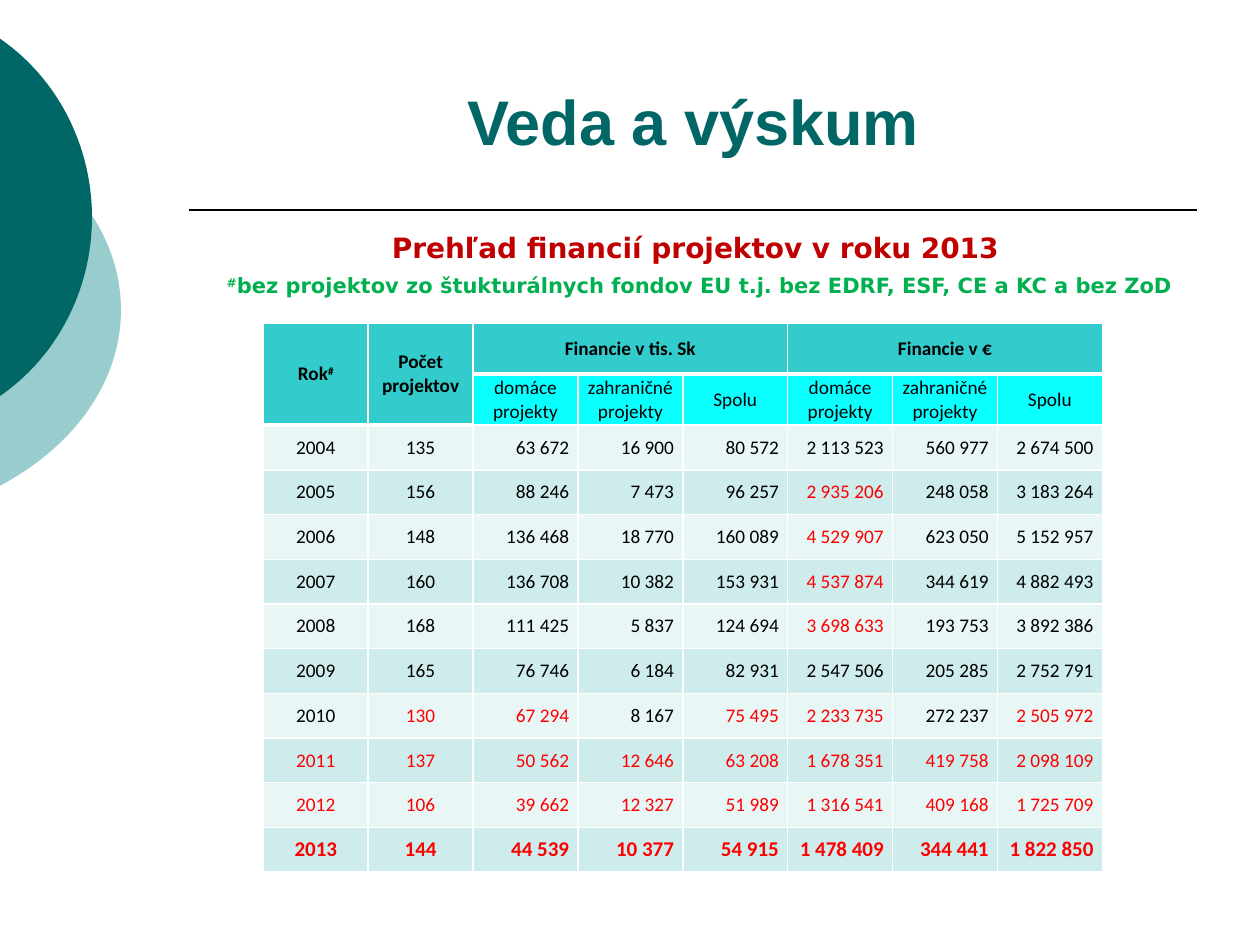
from lxml import etree
from pptx import Presentation
from pptx.dml.color import RGBColor
from pptx.enum.shapes import MSO_CONNECTOR as Connector
from pptx.enum.text import MSO_ANCHOR as Anchor, PP_ALIGN as Align
from pptx.oxml import parse_xml
from pptx.oxml.ns import nsdecls, qn
from pptx.util import Inches, Pt

BLACK = RGBColor(0x00, 0x00, 0x00)
WHITE = RGBColor(0xFF, 0xFF, 0xFF)
RED = RGBColor(0xFF, 0x00, 0x00)
DARK_RED = RGBColor(0xC0, 0x00, 0x00)
GREEN = RGBColor(0x00, 0xB0, 0x50)
TEAL = RGBColor(0x00, 0x66, 0x66)
PALE_TEAL = RGBColor(0x99, 0xCC, 0xCC)
HEADER = RGBColor(0x33, 0xCC, 0xCC)
SUBHEADER = RGBColor(0x0A, 0xFF, 0xFF)
BANDS = (RGBColor(0xE8, 0xF6, 0xF6), RGBColor(0xCE, 0xEC, 0xEC))

# Header cells: (column, text, superscript, rows spanned, columns spanned)
GROUPS = [
    (0, "Rok", "#", 2, 1),
    (1, "Počet projektov", "", 2, 1),
    (2, "Financie v tis. Sk", "", 1, 3),
    (5, "Financie v €", "", 1, 3),
]
SUBHEADINGS = ["domáce projekty", "zahraničné projekty", "Spolu"] * 2

YEARS = [
    ("2004", "135", "63 672", "16 900", "80 572", "2 113 523", "560 977", "2 674 500"),
    ("2005", "156", "88 246", "7 473", "96 257", "2 935 206", "248 058", "3 183 264"),
    ("2006", "148", "136 468", "18 770", "160 089", "4 529 907", "623 050", "5 152 957"),
    ("2007", "160", "136 708", "10 382", "153 931", "4 537 874", "344 619", "4 882 493"),
    ("2008", "168", "111 425", "5 837", "124 694", "3 698 633", "193 753", "3 892 386"),
    ("2009", "165", "76 746", "6 184", "82 931", "2 547 506", "205 285", "2 752 791"),
    ("2010", "130", "67 294", "8 167", "75 495", "2 233 735", "272 237", "2 505 972"),
    ("2011", "137", "50 562", "12 646", "63 208", "1 678 351", "419 758", "2 098 109"),
    ("2012", "106", "39 662", "12 327", "51 989", "1 316 541", "409 168", "1 725 709"),
    ("2013", "144", "44 539", "10 377", "54 915", "1 478 409", "344 441", "1 822 850"),
]
# Columns printed in red, by year
RED_COLUMNS = {year: {5} for year in ("2005", "2006", "2007", "2008")}
RED_COLUMNS["2010"] = {1, 2, 4, 5, 7}
RED_COLUMNS.update({year: set(range(8)) for year in ("2011", "2012", "2013")})


def add_text(paragraph, text, font="Calibri", size=11, color=BLACK, bold=False,
             align=Align.CENTER, raised=False):
    paragraph.alignment = align
    run = paragraph.add_run()
    run.text = text
    run.font.name, run.font.size, run.font.bold = font, Pt(size), bold
    run.font.color.rgb = color
    if raised:
        run._r.get_or_add_rPr().set("baseline", "30000")


class SlideBuilder:
    """Places elements on a grid of 100 columns by 75 rows."""

    def __init__(self, deck):
        self.col = deck.slide_width / 100
        self.row = deck.slide_height / 75
        self.slide = deck.slides.add_slide(deck.slide_layouts[5])
        self.shapes = self.slide.shapes

    def box(self, left, top, width, height):
        return (round(left * self.col), round(top * self.row),
                round(width * self.col), round(height * self.row))

    def title(self, text, *place):
        title = self.shapes.title
        title.left, title.top, title.width, title.height = self.box(*place)
        title.text_frame.vertical_anchor = Anchor.MIDDLE
        add_text(title.text_frame.paragraphs[0], text, font="Arial", size=36,
                 color=TEAL, bold=True)

    def disc(self, color, place, start, pull_a, pull_b, side):
        """Disc cut by the left edge; its lower half mirrors the upper."""
        left, top, width, height = self.box(*place)
        mirror = [(x, 2 * side[1] - y) for x, y in (pull_b, pull_a, start)]
        outline = self.shapes.build_freeform(*self.box(*start, 0, 0)[:2])
        outline.add_line_segments([self.box(*point, 0, 0)[:2]
                                   for point in (side, mirror[-1])], close=True)
        disc = outline.convert_to_shape()
        disc.left, disc.top, disc.width, disc.height = left, top, width, height
        disc.shadow.inherit = False
        disc.fill.solid()
        disc.fill.fore_color.rgb = color
        disc.line.fill.background()

        # Round the outline: the path is measured inside the whole disc's frame
        contour = disc._element.spPr.find(".//" + qn("a:path"))
        contour.set("w", str(width))
        contour.set("h", str(height))
        for part in list(contour):
            contour.remove(part)
        for tag, points in (("moveTo", [start]), ("cubicBezTo", [pull_a, pull_b, side]),
                            ("cubicBezTo", mirror), ("close", [])):
            part = etree.SubElement(contour, qn("a:" + tag))
            for point in points:
                x, y = self.box(*point, 0, 0)[:2]
                etree.SubElement(part, qn("a:pt"), x=str(x - left), y=str(y - top))

    def rule(self, left, right, level):
        x, y, width, _ = self.box(left, level, right - left, 0)
        rule = self.shapes.add_connector(Connector.STRAIGHT, x, y, x + width, y)
        rule.line.color.rgb = BLACK
        rule.line.width = Pt(1)
        etree.SubElement(rule._element.spPr, qn("a:effectLst"))

    def body(self, paragraphs, *place):
        """Each paragraph is its space before and a list of (text, format)."""
        frame = self.shapes.add_textbox(*self.box(*place)).text_frame
        frame.word_wrap = True
        for number, (space, runs) in enumerate(paragraphs):
            paragraph = frame.add_paragraph() if number else frame.paragraphs[0]
            paragraph.space_before = Pt(space)
            properties = paragraph._p.get_or_add_pPr()
            properties.set("marL", str(Inches(0.38)))
            properties.set("indent", str(-Inches(0.38)))
            for text, style in runs:
                add_text(paragraph, text, font="DejaVu Sans", bold=True, **style)

    def table(self, row_heights, columns, left, top, width):
        place = self.box(left, top, width, sum(row_heights))
        table = self.shapes.add_table(len(row_heights), columns, *place).table
        table.first_row = table.horz_banding = False
        for column in table.columns:
            column.width = round(width * self.col / columns)
        for row, height in zip(table.rows, row_heights):
            row.height = round(height * self.row)
        return table

    def cell(self, cell, fill, text="", top=1, bottom=1, **style):
        cell.fill.solid()
        cell.fill.fore_color.rgb = fill
        cell.vertical_anchor = Anchor.MIDDLE
        cell.margin_left = cell.margin_right = Inches(0.07)
        cell.margin_top = cell.margin_bottom = 0
        borders = (("L", 1), ("R", 1), ("T", top), ("B", bottom))
        for place, (side, points) in enumerate(borders):
            cell._tc.get_or_add_tcPr().insert(place, parse_xml(
                f'<a:ln{side} {nsdecls("a")} w="{Pt(points)}"><a:solidFill>'
                f'<a:srgbClr val="{WHITE}"/></a:solidFill></a:ln{side}>'))
        if text:
            add_text(cell.text_frame.paragraphs[0], text, **style)


def main():
    deck = Presentation()
    deck.slide_width, deck.slide_height = Inches(10), Inches(7.5)
    page = SlideBuilder(deck)

    # Decoration and title
    page.disc(PALE_TEAL, (-35.4, 7.5, 45, 34.2),
              (-0.1, 10.6), (6, 13.8), (9.6, 19), (9.6, 24.6))
    page.disc(TEAL, (-26.5, 0, 33.8, 34.5),
              (-0.1, 3), (4.6, 6.2), (7.3, 11.6), (7.3, 17.25))
    page.rule(15, 95, 16.67)
    page.title("Veda a výskum", 15, 3.3, 80, 12.5)

    # Subtitle and footnote
    page.body([
        (3.2, [("Prehľad financií projektov v roku 2013", dict(size=16, color=DARK_RED))]),
        (2.8, [(" ", dict(size=14, color=DARK_RED)),
               ("#", dict(size=12, color=GREEN, raised=True)),
               ("bez projektov zo štukturálnych fondov EU t.j. bez EDRF, ESF, CE a KC a bez ZoD",
                dict(size=12, color=GREEN))]),
    ], 15.4, 17.8, 79.6, 46.4)

    # Table header
    finances = page.table([4.05] * 2 + [3.55] * len(YEARS), 8, 20.9, 25.65, 66.6)
    for first, text, mark, rows, columns in GROUPS:
        for r in range(rows):
            for c in range(first, first + columns):
                page.cell(finances.cell(r, c), HEADER, bottom=3)
        heading = finances.cell(0, first)
        heading.merge(finances.cell(rows - 1, first + columns - 1))
        paragraph = heading.text_frame.paragraphs[0]
        add_text(paragraph, text, bold=True)
        if mark:
            add_text(paragraph, mark, bold=True, raised=True)
    for c, text in enumerate(SUBHEADINGS, start=2):
        page.cell(finances.cell(1, c), SUBHEADER, text, top=3)

    # One row a year, the latest one stressed
    for r, values in enumerate(YEARS):
        latest = r == len(YEARS) - 1
        for c, value in enumerate(values):
            page.cell(finances.cell(r + 2, c), BANDS[r % 2], value,
                      top=3 if r == 0 and c < 2 else 1,
                      size=12 if latest else 11, bold=latest,
                      color=RED if c in RED_COLUMNS.get(values[0], ()) else BLACK,
                      align=Align.CENTER if c < 2 else Align.RIGHT)

    deck.save("out.pptx")


if __name__ == "__main__":
    main()
